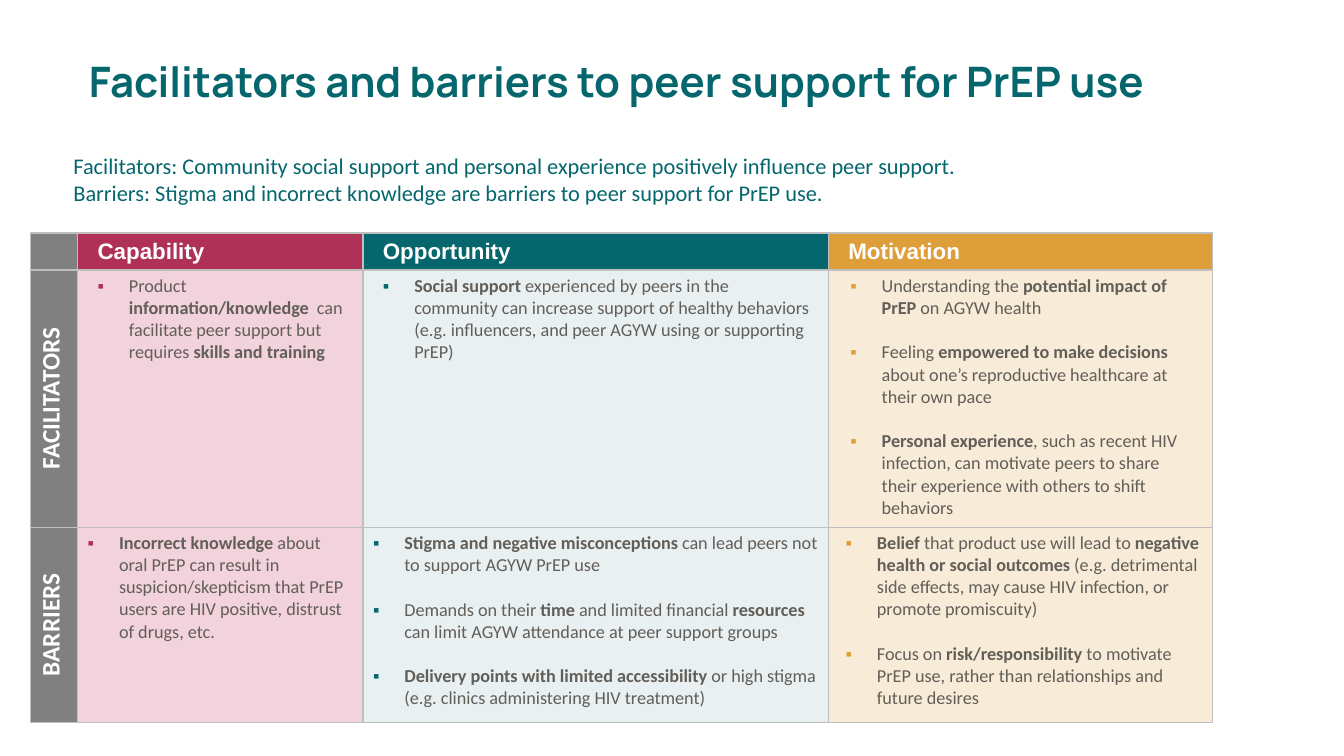
from lxml.etree import SubElement as Sub
from pptx import Presentation
from pptx.dml.color import RGBColor
from pptx.enum.text import MSO_ANCHOR as Anchor, MSO_AUTO_SIZE as Fit, PP_ALIGN as Align
from pptx.oxml import parse_xml
from pptx.oxml.ns import nsdecls, qn
from pptx.util import Cm, Pt

TEAL, ROSE, GOLD = "05676D", "AF3158", "DE9F3B"
GREY, LINE, INK, WHITE = "808080", "BFBFBF", "625E58", "FFFFFF"

TITLE = "Facilitators and barriers to peer support for PrEP use"
INTRO = [
    "Facilitators: Community social support and personal experience positively influence peer support.",
    "Barriers: Stigma and incorrect knowledge are barriers to peer support for PrEP use.",
]
WIDTHS = [1.19, 7.19, 11.73, 9.68]
HEIGHTS = [0.91, 6.48, 4.93]
HEADS = [("Capability", ROSE, "F2D2DC"), ("Opportunity", TEAL, "E9F0F1"), ("Motivation", GOLD, "F8ECD8")]
WIDE, SLIM = (0.5, 0.4), (0.25, 0.25)
ROWS = [
    ("FACILITATORS", WIDE, [0.79, 0.79, 0.84], [
        ["Product** information/knowledge  **can facilitate peer support but requires **skills and training**"],
        ["**Social support **experienced by peers in the community can increase support of healthy behaviors "
         "(e.g. influencers, and peer AGYW using or supporting PrEP)"],
        ["Understanding the **potential impact of PrEP** on AGYW health",
         "Feeling **empowered to make decisions **about one’s reproductive healthcare at their own pace",
         "**Personal experience**, such as recent HIV infection, can motivate peers to share "
         "their experience with others to shift behaviors"],
    ]),
    ("BARRIERS", SLIM, [0.79, 0.79, 0.97], [
        ["**Incorrect knowledge** about oral PrEP can result in suspicion/skepticism that PrEP users "
         "are HIV positive, distrust of drugs, etc."],
        ["**Stigma and negative misconceptions **can lead peers not to support AGYW PrEP use",
         "Demands on their **time **and limited financial **resources** can limit AGYW attendance "
         "at peer support groups",
         "**Delivery points with limited accessibility **or high stigma "
         "(e.g. clinics administering HIV treatment)"],
        ["**Belief** that product use will lead to **negative health or social outcomes **"
         "(e.g. detrimental side effects, may cause HIV infection, or promote promiscuity)",
         "Focus on **risk/responsibility **to motivate PrEP use, rather than relationships and future desires"],
    ]),
]


def tint(code):
    return RGBColor.from_string(code)


def write(frame, lines, size=16, font="Calibri", color=TEAL, bold=False,
          align=Align.LEFT, gap=0, dot=None, left=0, lead=None):
    for i, line in enumerate(lines):
        para = frame.paragraphs[0] if i == 0 else frame.add_paragraph()
        para.alignment = align
        para.space_before = Pt(gap if i else 0)
        if lead:
            para.line_spacing = lead
        if dot:
            props = para._p.get_or_add_pPr()
            props.set("marL", str(Cm(left)))
            props.set("indent", str(Cm(-0.79)))
            Sub(Sub(props, qn("a:buClr")), qn("a:srgbClr"), val=dot)
            Sub(props, qn("a:buFont"), typeface="Arial")
            Sub(props, qn("a:buChar"), char="▪")
        for j, part in enumerate(line.split("**")):
            if part:
                run = para.add_run()
                run.text = part
                run.font.size = Pt(size)
                run.font.name = font
                run.font.bold = bold or j % 2 == 1
                run.font.color.rgb = tint(color)


class Deck:
    def __init__(self):
        self.show = Presentation()
        self.show.slide_width, self.show.slide_height = Cm(33.87), Cm(19.05)
        self.slide = self.show.slides.add_slide(self.show.slide_layouts[5])

    def title(self, text):
        head = self.slide.shapes.title
        head.left, head.top, head.width, head.height = Cm(0), Cm(0.53), Cm(29.21), Cm(3.18)
        frame = head.text_frame
        frame.auto_size = Fit.NONE
        frame.vertical_anchor = Anchor.MIDDLE
        frame.margin_left = Cm(2.24)
        write(frame, [text], size=30, font="Manrope", bold=True, lead=0.9)

    def intro(self, lines):
        frame = self.slide.shapes.add_textbox(Cm(1.6), Cm(3.71), Cm(28.93), Cm(1.63)).text_frame
        frame.word_wrap = True
        write(frame, lines)

    def cell(self, row, col, fill, pad=SLIM):
        box = self.table.cell(row, col)
        box.fill.solid()
        box.fill.fore_color.rgb = tint(fill)
        box.margin_left, box.margin_right = Cm(pad[0]), Cm(pad[1])
        props = box._tc.get_or_add_tcPr()
        for i, side in enumerate("LRTB"):
            props.insert(i, parse_xml(
                f'<a:ln{side} {nsdecls("a")} w="12700"><a:solidFill>'
                f'<a:srgbClr val="{LINE}"/></a:solidFill></a:ln{side}>'))
        return box

    def grid(self):
        frame = self.slide.shapes.add_table(
            len(HEIGHTS), len(WIDTHS), Cm(0.77), Cm(5.87), Cm(sum(WIDTHS)), Cm(sum(HEIGHTS)))
        self.table = frame.table
        self.table.horz_banding = False
        for col, width in zip(self.table.columns, WIDTHS):
            col.width = Cm(width)
        for row, height in zip(self.table.rows, HEIGHTS):
            row.height = Cm(height)
        blank = self.cell(0, 0, GREY)
        blank.margin_top = blank.margin_bottom = 0
        for c, (name, dark, _) in enumerate(HEADS, 1):
            box = self.cell(0, c, dark, WIDE)
            box.vertical_anchor = Anchor.MIDDLE
            write(box.text_frame, [name], font="Arial", color=WHITE, bold=True)
        for r, (name, pad, lefts, lists) in enumerate(ROWS, 1):
            side = self.cell(r, 0, GREY)
            side._tc.get_or_add_tcPr().set("vert", "vert270")
            write(side.text_frame, [name], size=18, color=WHITE, bold=True, align=Align.CENTER)
            for c, ((_, dark, pale), left, lines) in enumerate(zip(HEADS, lefts, lists), 1):
                write(self.cell(r, c, pale, pad).text_frame, lines,
                      size=13, color=INK, gap=15.9, dot=dark, left=left)


def main():
    deck = Deck()
    deck.title(TITLE)
    deck.intro(INTRO)
    deck.grid()
    deck.show.save("out.pptx")


if __name__ == "__main__":
    main()
